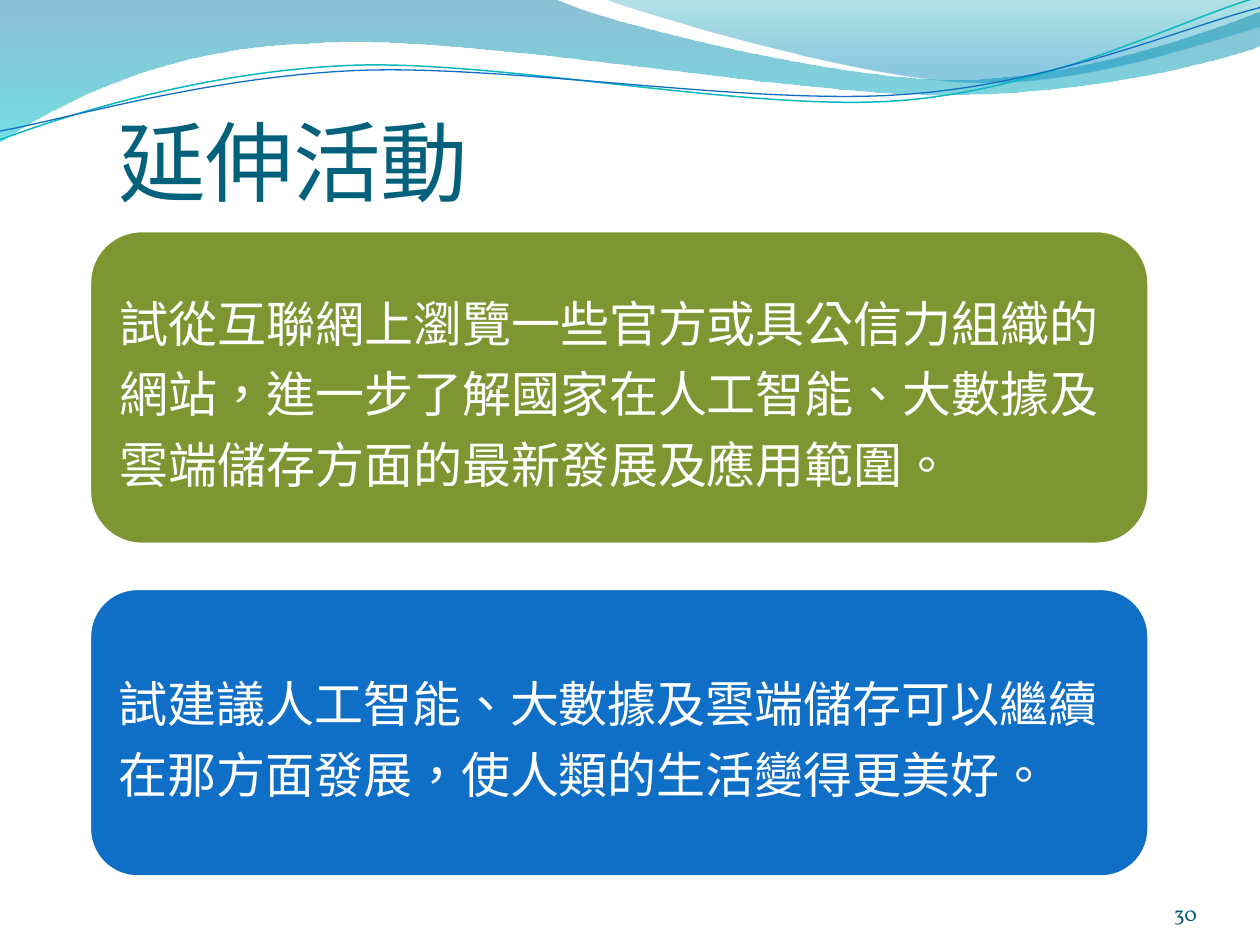
from lxml.etree import SubElement
from pptx import Presentation
from pptx.dml.color import RGBColor
from pptx.enum.lang import MSO_LANGUAGE_ID as LANGUAGE
from pptx.enum.shapes import MSO_SHAPE
from pptx.enum.text import MSO_ANCHOR, MSO_AUTO_SIZE, PP_ALIGN
from pptx.oxml.ns import qn
from pptx.util import Inches, Pt

CJK_FONT = "Noto Sans CJK SC"
NUMBER_FONT = "Vollkorn"
WHITE = RGBColor(0xFF, 0xFF, 0xFF)
TITLE_TEAL = RGBColor(0x04, 0x61, 0x7B)
NUMBER_TEAL = RGBColor(0x04, 0x5D, 0x75)
OLIVE = RGBColor(0x7E, 0x96, 0x32)
BLUE = RGBColor(0x0F, 0x6F, 0xC6)
AQUA = RGBColor(0x0A, 0xB8, 0xBF)
OCEAN = RGBColor(0x00, 0x74, 0xA1)
CYAN = RGBColor(0x00, 0xC6, 0xCF)
SEA = RGBColor(0x00, 0xA1, 0xA9)
SKY = RGBColor(0x00, 0x8B, 0xBF)

# Content
TITLE = "延伸活動"
PAGE_NUMBER = "30"
ACTIVITIES = [  # text, fill, top, height
    ("試從互聯網上瀏覽一些官方或具公信力組織的網站，進一步了解國家在人工智能、"
     "大數據及雲端儲存方面的最新發展及應用範圍。", OLIVE, 1.83, 2.49),
    ("試建議人工智能、大數據及雲端儲存可以繼續在那方面發展，使人類的生活變得更美好。",
     BLUE, 4.67, 2.29),
]

# Each path starts at a point; two numbers make a line, six a Bézier curve.
# Gradient stops are position, colour, opacity in percent.
WAVE_BANDS = [
    ([(0, 0), (4.4, -0.01), (4.76, 0.17, 6.64, 0.63, 7.58, 0.63),
      (8.53, 0.63, 9.58, 0.26, 10, 0.09), (10.01, 0.36),
      (9.83, 0.44, 8.7, 0.76, 7.46, 0.75), (6.22, 0.75, 3.82, 0.28, 2.57, 0.34),
      (1.29, 0.36, 0.46, 0.83, -0.01, 1.13), (0, 0)],
     [(0, OCEAN, 45), (1, CYAN, 55)]),
    ([(4.79, -0.01), (5.09, 0.11, 6.82, 0.62, 7.69, 0.65),
      (8.56, 0.69, 9.61, 0.32, 10, 0.21), (10, 0), (4.79, -0.01)],
     [(0, SEA, 30), (0.8, SKY, 45)]),
]
WAVE_LINES = [
    ([(0, 1.11), (0.48, 0.93, 1.58, 0.57, 2.77, 0.52),
      (3.95, 0.47, 5.93, 0.89, 7.13, 0.8), (8.33, 0.71, 9.38, 0.15, 9.98, -0.02)],
     AQUA, 0.85),
    ([(0, 1.04), (0.47, 0.96, 1.64, 0.61, 2.83, 0.56),
      (4.03, 0.51, 5.97, 0.84, 7.17, 0.75), (8.36, 0.67, 9.41, 0.21, 10, 0.06)],
     BLUE, 0.75),
]


def add_wave(shapes, path, close):
    """Build the outline through its end points, then bend the curved segments."""
    ends = [(Inches(segment[-2]), Inches(segment[-1])) for segment in path]
    builder = shapes.build_freeform(*ends[0])
    builder.add_line_segments(ends[1:], close=close)
    wave = builder.convert_to_shape()
    wave.shadow.inherit = False
    line_elements = list(wave._element.iter(qn("a:lnTo")))
    for element, segment in zip(line_elements, path[1:]):
        if len(segment) == 6:
            curve = element.makeelement(qn("a:cubicBezTo"), {})
            for x, y in zip(segment[::2], segment[1::2]):
                point = SubElement(curve, qn("a:pt"))
                point.set("x", str(Inches(x) - wave.left))
                point.set("y", str(Inches(y) - wave.top))
            element.getparent().replace(element, curve)
    return wave


def write_text(shape, text, size, font_name, color, anchor, margins,
               align=PP_ALIGN.LEFT, line_spacing=None,
               language=LANGUAGE.TRADITIONAL_CHINESE):
    frame = shape.text_frame
    frame.text = text
    left, top, right, bottom = map(Inches, margins)
    frame_format = {"word_wrap": True, "auto_size": MSO_AUTO_SIZE.NONE,
                    "vertical_anchor": anchor, "margin_left": left,
                    "margin_top": top, "margin_right": right, "margin_bottom": bottom}
    for name, value in frame_format.items():
        setattr(frame, name, value)
    paragraph = frame.paragraphs[0]
    paragraph.alignment = align
    paragraph.line_spacing = line_spacing
    font = paragraph.runs[0].font
    font_format = {"size": Pt(size), "name": font_name, "bold": False,
                   "language_id": language}
    for name, value in font_format.items():
        setattr(font, name, value)
    font.color.rgb = color
    # East Asian typeface
    SubElement(font._element, qn("a:ea")).set("typeface", font_name)


def main():
    presentation = Presentation()
    presentation.slide_width, presentation.slide_height = Inches(10), Inches(7.5)
    slide = presentation.slides.add_slide(presentation.slide_layouts[5])
    shapes = slide.shapes
    title = shapes.title

    # Wave header
    for path, stops in WAVE_BANDS:
        band = add_wave(shapes, path, close=True)
        band.line.fill.background()
        band.fill.gradient()
        band.fill.gradient_angle = 270
        for stop, (position, color, opacity) in zip(band.fill.gradient_stops, stops):
            stop.position = position
            stop.color.rgb = color
            color_element = stop._gs.find(qn("a:srgbClr"))
            SubElement(color_element, qn("a:alpha")).set("val", str(opacity * 1000))
    for path, color, width in WAVE_LINES:
        wave_line = add_wave(shapes, path, close=False)
        wave_line.fill.background()
        wave_line.line.color.rgb = color
        wave_line.line.width = Pt(width)

    # Title, in front of the waves
    shapes._spTree.append(title._element)
    title.left, title.top, title.width, title.height = map(Inches, (0.94, 0.44, 9, 1.25))
    write_text(title, TITLE, 50, CJK_FONT, TITLE_TEAL, MSO_ANCHOR.BOTTOM, (0, 0.05, 0, 0))

    # Page number
    number = shapes.add_textbox(*map(Inches, (8.67, 6.95, 0.83, 0.4)))
    write_text(number, PAGE_NUMBER, 12, NUMBER_FONT, NUMBER_TEAL, MSO_ANCHOR.BOTTOM,
               (0, 0, 0, 0), PP_ALIGN.RIGHT, language=LANGUAGE.ENGLISH_US)

    # Activity boxes
    for text, fill, top, height in ACTIVITIES:
        box = shapes.add_shape(MSO_SHAPE.ROUNDED_RECTANGLE,
                               *map(Inches, (0.71, top, 8.41, height)))
        box.shadow.inherit = False
        box.fill.solid()
        box.fill.fore_color.rgb = fill
        box.line.color.rgb = WHITE
        box.line.width = Pt(2)
        write_text(box, text, 28, CJK_FONT, WHITE, MSO_ANCHOR.MIDDLE,
                   (0.12,) * 4, line_spacing=1.2)

    presentation.save("out.pptx")


if __name__ == "__main__":
    main()
